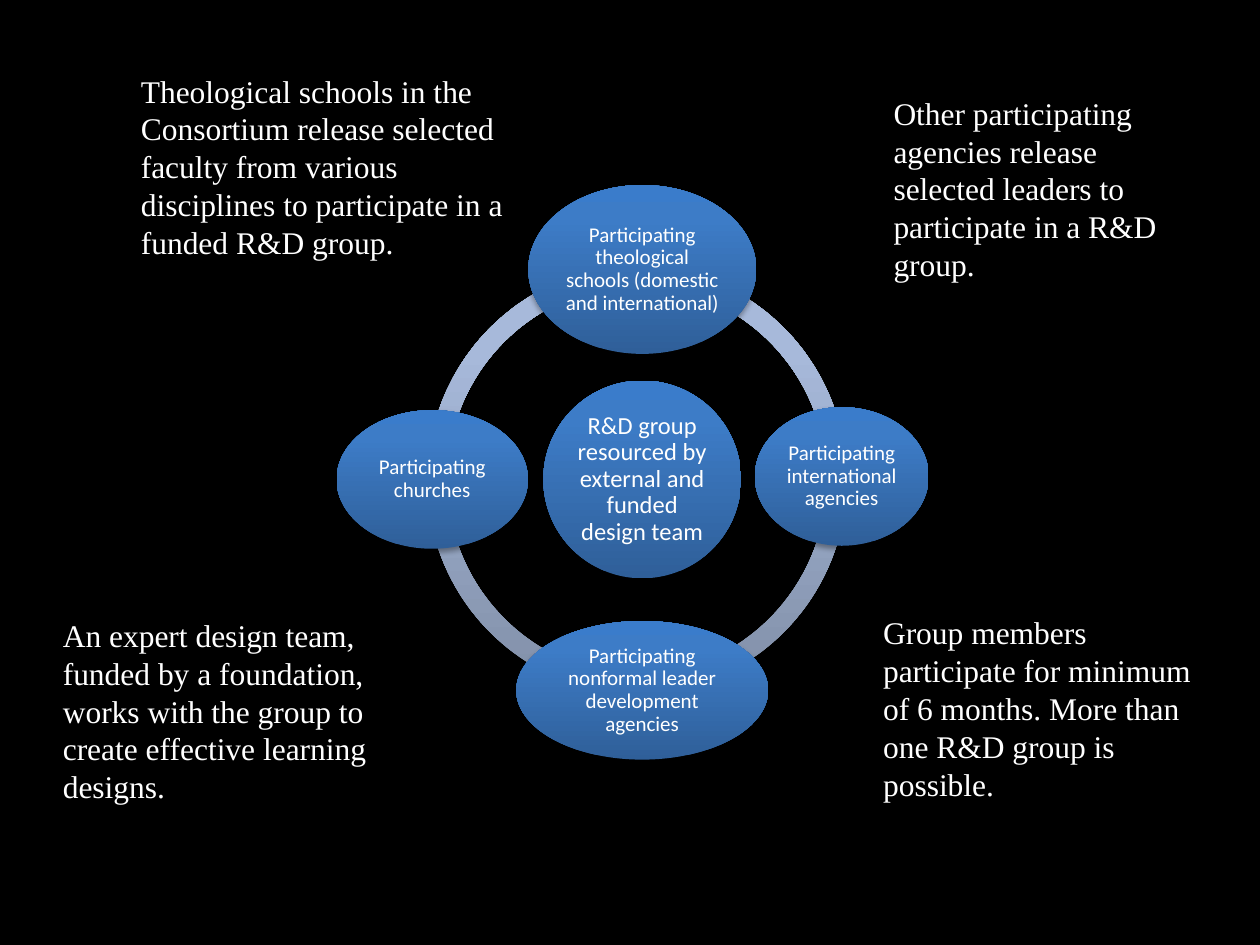
from copy import deepcopy
from dataclasses import dataclass

from lxml.etree import SubElement
from pptx import Presentation
from pptx.dml.color import RGBColor
from pptx.enum.shapes import MSO_SHAPE
from pptx.enum.text import MSO_ANCHOR, MSO_AUTO_SIZE, PP_ALIGN
from pptx.oxml.ns import qn
from pptx.shapes.autoshape import Shape
from pptx.slide import Slide
from pptx.text.text import TextFrame
from pptx.util import Pt


@dataclass(frozen=True)
class Theme:
    background: str = "000000"
    text: str = "FFFFFF"
    shadow: str = "000000"
    ring: tuple[str, ...] = ("818FA8", "A7B9DA", "A7BADC")
    node: tuple[str, ...] = ("2F5F99", "3D7CC7", "3A7CCB")
    stops: tuple[float, ...] = (0, 0.8, 1)
    node_font: str = "Calibri"
    note_font: str = "Times New Roman"
    hub_size: float = 14
    node_size: float = 12
    note_size: float = 18


@dataclass(frozen=True)
class Arc:
    left: float
    start: float
    end: float


@dataclass(frozen=True)
class Node:
    text: str
    cx: float
    cy: float
    width: float
    height: float
    size: float


@dataclass(frozen=True)
class Note:
    text: str
    left: float
    top: float
    width: float
    height: float


THEME = Theme()
RING_TOP, RING_SIZE, RING_THICKNESS = 151.2, 246.24, 0.046
CX, CY = 367.0, 274.0
ARCS = [
    Arc(244.1, 180, 270),
    Arc(244.1, 90, 180),
    Arc(237.6, 359.05, 86.97),
    Arc(237.6, 273.03, 359.21),
]
NODES = [
    Node("R&D group resourced by external and funded design team",
         CX, CY, 113, 113, THEME.hub_size),
    Node("Participating theological schools (domestic and international)",
         CX, 154, 130.3, 96.5, THEME.node_size),
    Node("Participating international agencies", 481, 272.3, 99.4, 79.2, THEME.node_size),
    Node("Participating nonformal leader development agencies",
         CX, 394.5, 144, 79.2, THEME.node_size),
    Node("Participating churches", 247, CY, 109.4, 79.2, THEME.node_size),
]
NOTES = [
    Note("Theological schools in the Consortium release selected faculty from various "
         "disciplines to participate in a funded R&D group.", 73.4, 37.4, 238.3, 116.6),
    Note("An expert design team, funded by a foundation, works with the group to create "
         "effective learning designs.", 28.8, 348.5, 231.8, 116.6),
    Note("Other participating agencies release selected leaders to participate in a "
         "R&D group.", 503.5, 50, 187.9, 116.6),
    Note("Group members participate for minimum of 6 months. More than one R&D group "
         "is possible.", 497.5, 347, 203, 116.6),
]


def write(tf: TextFrame, text: str, *, font: str, size: float,
          align: PP_ALIGN = PP_ALIGN.LEFT, spacing: float = 1.0) -> None:
    tf.word_wrap = True
    p = tf.paragraphs[0]
    p.alignment, p.line_spacing = align, spacing
    r = p.add_run()
    r.text = text
    r.font.name, r.font.size = font, Pt(size)
    r.font.color.rgb = RGBColor.from_string(THEME.text)


def add_shadow(sp: Shape) -> None:
    effects = SubElement(sp._element.spPr, qn("a:effectLst"))
    outer = SubElement(effects, qn("a:outerShdw"), blurRad=str(Pt(3.1)),
                       dist=str(Pt(1.8)), dir="5400000", rotWithShape="0")
    color = SubElement(outer, qn("a:srgbClr"), val=THEME.shadow)
    SubElement(color, qn("a:alpha"), val="35000")


def add_solid(s: Slide, kind: MSO_SHAPE, left: float, top: float, width: float,
              height: float, colors: tuple[str, ...]) -> Shape:
    sp = s.shapes.add_shape(kind, Pt(left), Pt(top), Pt(width), Pt(height))
    sp.line.fill.background()
    sp.fill.gradient()
    sp.fill.gradient_angle = 90
    stop_list = sp._element.spPr.find(qn("a:gradFill")).find(qn("a:gsLst"))
    stop_list.append(deepcopy(stop_list[0]))
    for stop, position, color in zip(sp.fill.gradient_stops, THEME.stops, colors):
        stop.position = position
        stop.color.rgb = RGBColor.from_string(color)
    add_shadow(sp)
    return sp


def add_arc(s: Slide, arc: Arc) -> None:
    sp = add_solid(s, MSO_SHAPE.BLOCK_ARC, arc.left, RING_TOP, RING_SIZE, RING_SIZE,
                   THEME.ring)
    for i, value in enumerate((arc.start * 0.6, arc.end * 0.6, RING_THICKNESS)):
        sp.adjustments[i] = value


def add_node(s: Slide, node: Node) -> None:
    sp = add_solid(s, MSO_SHAPE.OVAL, node.cx - node.width / 2, node.cy - node.height / 2,
                   node.width, node.height, THEME.node)
    tf = sp.text_frame
    tf.margin_left = tf.margin_right = tf.margin_top = tf.margin_bottom = Pt(1.4)
    tf.vertical_anchor = MSO_ANCHOR.MIDDLE
    write(tf, node.text, font=THEME.node_font, size=node.size,
          align=PP_ALIGN.CENTER, spacing=0.9)


def add_note(s: Slide, note: Note) -> None:
    sp = s.shapes.add_textbox(Pt(note.left), Pt(note.top), Pt(note.width), Pt(note.height))
    sp.text_frame.auto_size = MSO_AUTO_SIZE.SHAPE_TO_FIT_TEXT
    write(sp.text_frame, note.text, font=THEME.note_font, size=THEME.note_size)


def main() -> None:
    """Build the slide of the R&D group and the bodies that take part in it."""
    prs = Presentation()
    prs.slide_width, prs.slide_height = Pt(720), Pt(540)
    s = prs.slides.add_slide(prs.slide_layouts[6])
    s.background.fill.solid()
    s.background.fill.fore_color.rgb = RGBColor.from_string(THEME.background)
    for arc in ARCS:
        add_arc(s, arc)
    for node in NODES:
        add_node(s, node)
    for note in NOTES:
        add_note(s, note)
    prs.save("out.pptx")


if __name__ == "__main__":
    main()
